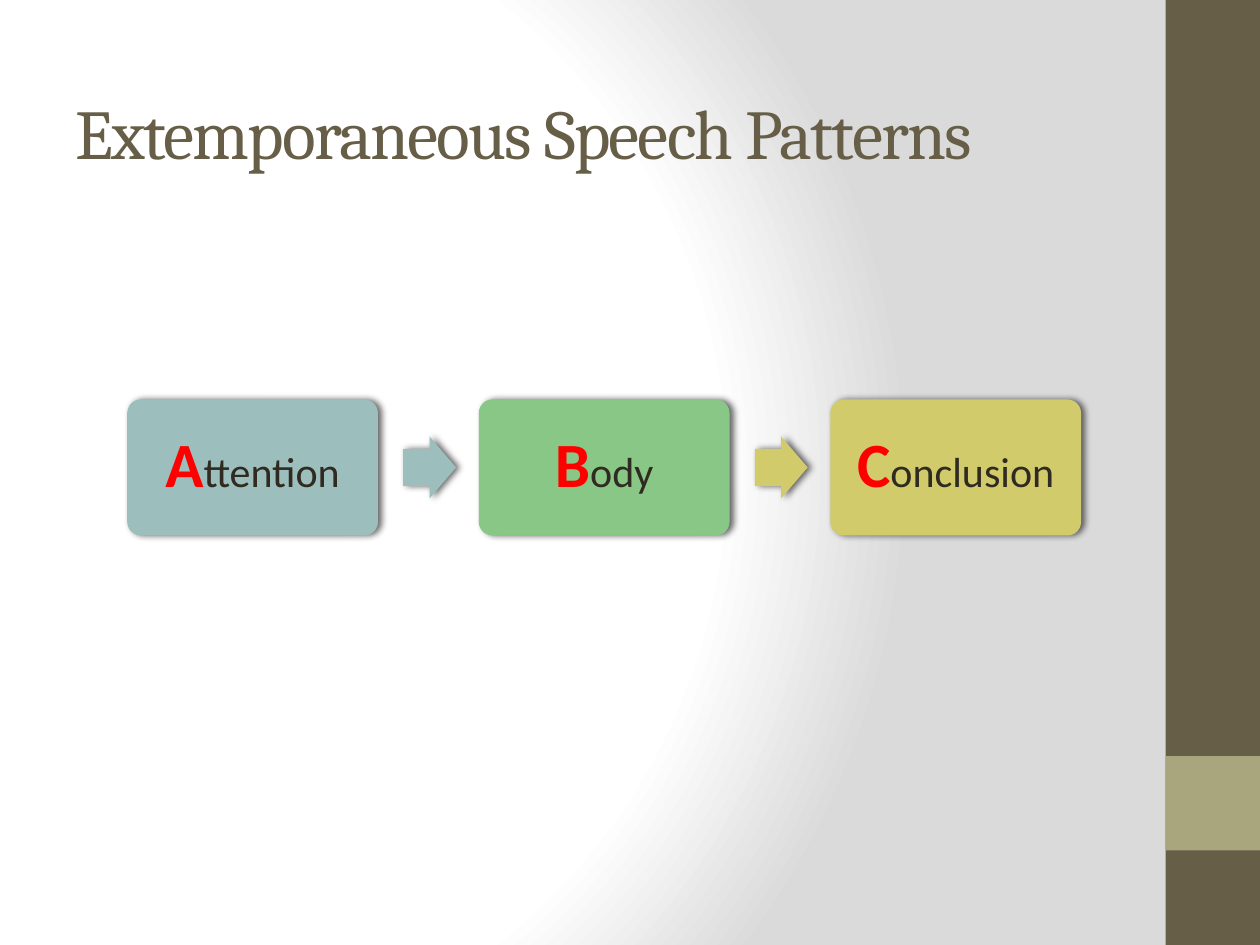
"""Build the slide on extemporaneous speech patterns."""
from lxml import etree
from pptx import Presentation
from pptx.dml.color import RGBColor
from pptx.enum.shapes import MSO_SHAPE
from pptx.enum.text import MSO_ANCHOR, PP_ALIGN
from pptx.oxml import parse_xml
from pptx.oxml.ns import qn
from pptx.util import Inches, Pt

RECT, ROUND, ARROW = MSO_SHAPE.RECTANGLE, MSO_SHAPE.ROUNDED_RECTANGLE, MSO_SHAPE.RIGHT_ARROW
MIDDLE, CENTER = MSO_ANCHOR.MIDDLE, PP_ALIGN.CENTER

TITLE = "Extemporaneous Speech Patterns"
STEPS = [("A", "ttention", "9CBEBD"), ("B", "ody", "88C785"), ("C", "onclusion", "D2CB6C")]
ARROWS = ["9CBEBD", "D2CB6C"]

THEME = {
    "band": "675E47",
    "accent": "A9A57C",
    "title": {"name": "Cambria", "size": 40, "color": "675E47"},
    "initial": {"name": "Calibri", "size": 36, "color": "FF0000", "bold": True},
    "rest": {"name": "Calibri", "size": 24, "color": "2F2B20", "bold": False},
    "fade": [(0, "FFFFFF"), (75, "FFFFFF"), (100, "DADADA")],
    "focus": {"l": 20, "t": 50, "r": 100, "b": 50},
}
NS = 'xmlns:a="http://schemas.openxmlformats.org/drawingml/2006/main"'
SHADOW = (f'<a:outerShdw {NS} blurRad="{Pt(4)}" dist="{Pt(2)}" dir="0" rotWithShape="0">'
          '<a:srgbClr val="000000"><a:alpha val="60000"/></a:srgbClr></a:outerShdw>')

LEFT, PITCH, MID = 1.01, 2.79, 3.71
BOX_W, BOX_H = 1.99, 1.08
ARROW_W, ARROW_H = 0.42, 0.49


def paint(slide):
    """Fill the background with a circular fade."""
    slide.background.fill.gradient()
    grad = next(slide.element.iter(qn("a:gradFill")))
    for child in list(grad):
        grad.remove(child)
    stops = etree.SubElement(grad, qn("a:gsLst"))
    for pos, color in THEME["fade"]:
        stop = etree.SubElement(stops, qn("a:gs"), pos=str(pos * 1000))
        etree.SubElement(stop, qn("a:srgbClr"), val=color)
    fade = etree.SubElement(grad, qn("a:path"), path="circle")
    sides = {side: str(value * 1000) for side, value in THEME["focus"].items()}
    etree.SubElement(fade, qn("a:fillToRect"), sides)


def block(slide, kind, place, color, adjust=(), shadow=False):
    """Add a filled shape without an outline."""
    shape = slide.shapes.add_shape(kind, *map(Inches, place))
    for index, value in enumerate(adjust):
        shape.adjustments[index] = value
    shape.fill.solid()
    shape.fill.fore_color.rgb = RGBColor.from_string(color)
    shape.line.fill.background()
    shape.shadow.inherit = False
    if shadow:
        shape.element.spPr.find(qn("a:effectLst")).append(parse_xml(SHADOW))
    return shape


def write(para, text, style):
    """Add a run in one of the theme's styles."""
    run = para.add_run()
    run.text = text
    values = {**style, "size": Pt(style["size"])}
    run.font.color.rgb = RGBColor.from_string(values.pop("color"))
    for name, value in values.items():
        setattr(run.font, name, value)
    return run


def head(slide):
    """Add the title."""
    frame = slide.shapes.add_textbox(*map(Inches, (0.5, 0.42, 8.33, 1.25))).text_frame
    frame.word_wrap = True
    frame.vertical_anchor = MIDDLE
    run = write(frame.paragraphs[0], TITLE, THEME["title"])
    run.font._element.set("spc", "-100")


def step(slide, left, first, rest, color):
    """Add one step box with its stressed initial."""
    place = (left, MID - BOX_H / 2, BOX_W, BOX_H)
    frame = block(slide, ROUND, place, color, (0.1,), True).text_frame
    inset = Inches(0.17)
    layout = {"word_wrap": True, "vertical_anchor": MIDDLE, "margin_left": inset,
              "margin_right": inset, "margin_top": inset, "margin_bottom": inset}
    for name, value in layout.items():
        setattr(frame, name, value)
    para = frame.paragraphs[0]
    para.alignment = CENTER
    para.line_spacing = 0.9
    write(para, first, THEME["initial"])
    write(para, rest, THEME["rest"])


def main():
    """Build and save the slide."""
    deck = Presentation()
    deck.slide_width, deck.slide_height = Inches(10), Inches(7.5)
    slide = deck.slides.add_slide(deck.slide_layouts[6])
    paint(slide)
    block(slide, RECT, (9.25, 0, 0.75, 7.5), THEME["band"])
    block(slide, RECT, (9.25, 6, 0.75, 0.75), THEME["accent"])
    head(slide)
    for index, item in enumerate(STEPS):
        step(slide, LEFT + index * PITCH, *item)
    for index, color in enumerate(ARROWS):
        left = LEFT + index * PITCH + BOX_W + 0.2
        place = (left, MID - ARROW_H / 2, ARROW_W, ARROW_H)
        block(slide, ARROW, place, color, (0.6, 0.5), True)
    deck.save("out.pptx")


if __name__ == "__main__":
    main()
